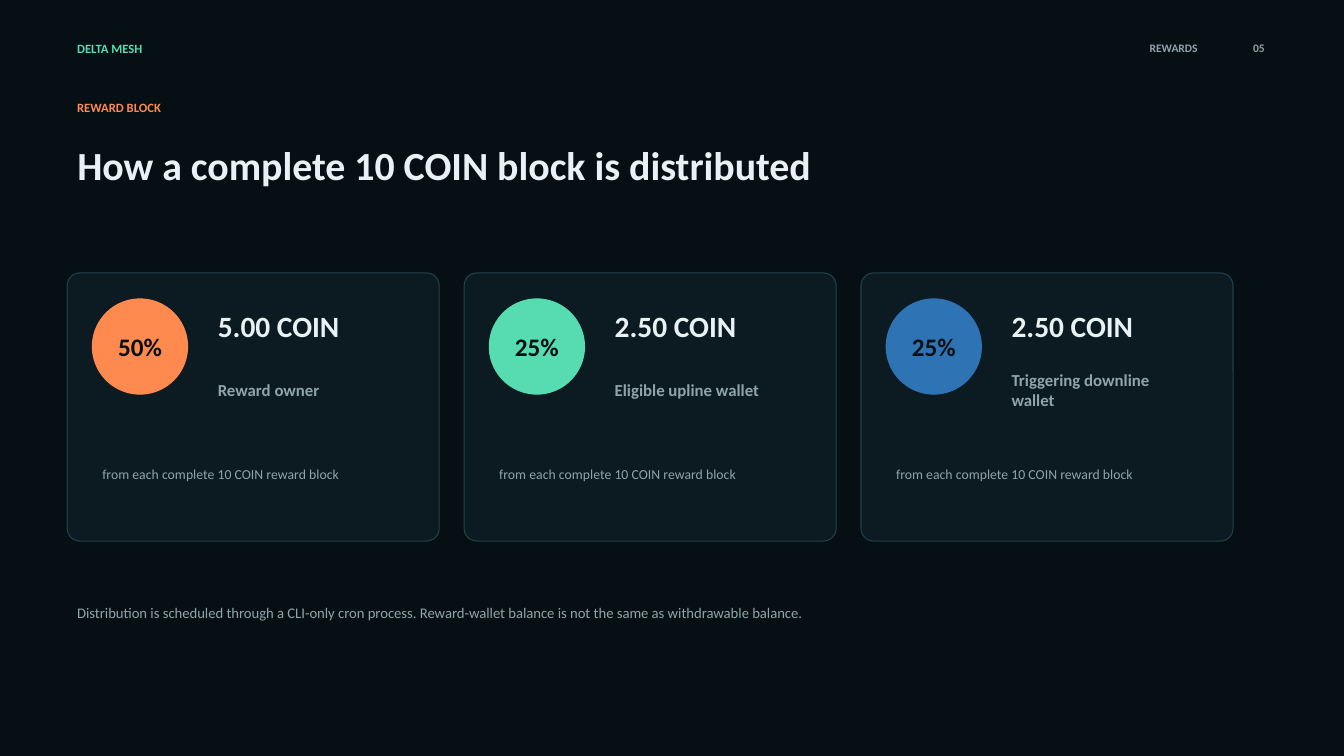
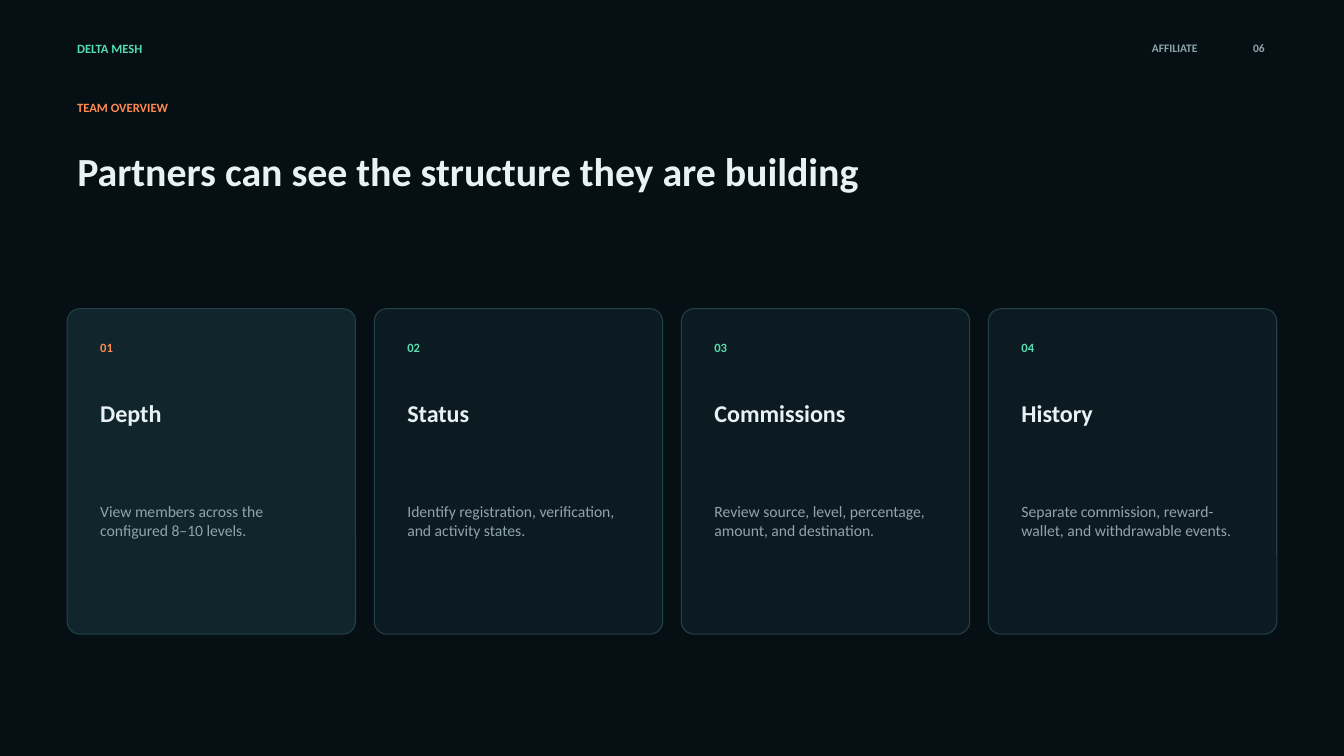
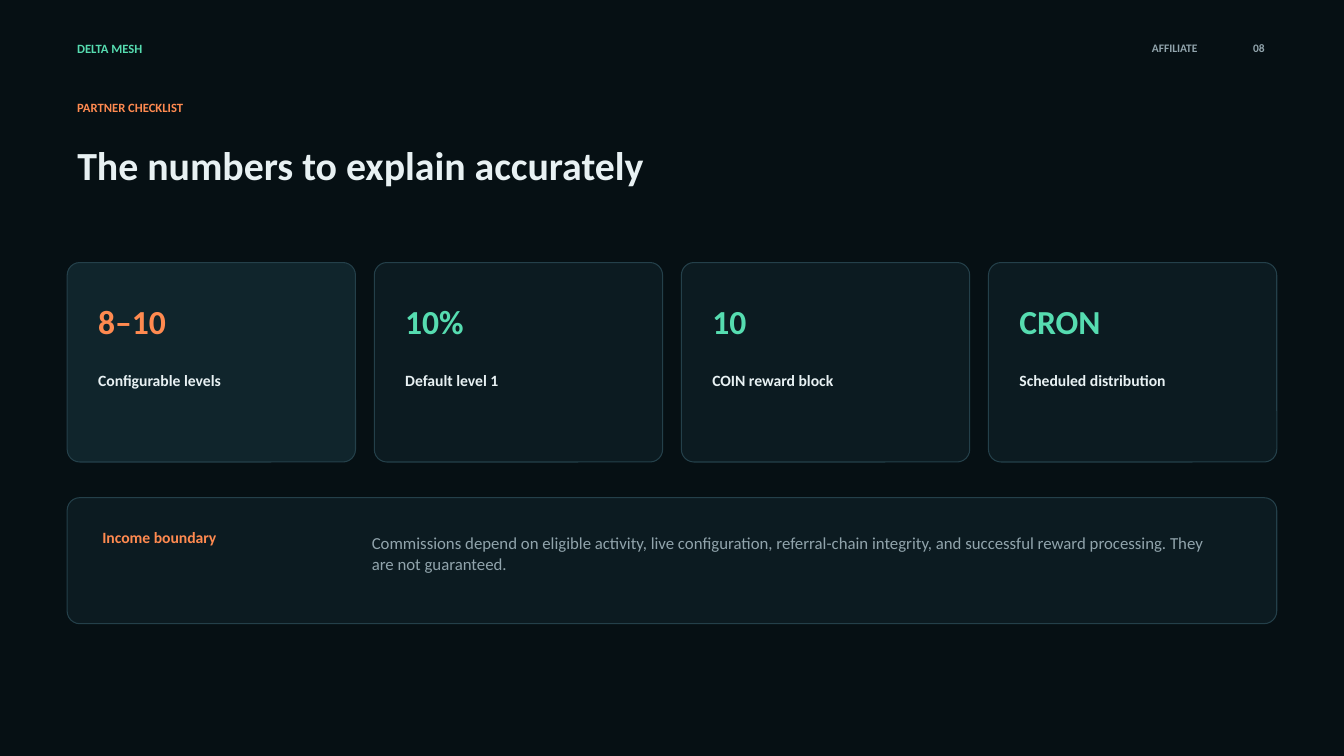
"""Build three dark reward and affiliate slides with a shared header and card grid."""
from dataclasses import dataclass
from typing import NamedTuple

import pptx
import pptx.dml.color
import pptx.enum.shapes
import pptx.enum.text
import pptx.shapes.autoshape
import pptx.slide
import pptx.text.text
import pptx.util

Pt = pptx.util.Pt
RGBColor = pptx.dml.color.RGBColor
PP_ALIGN = pptx.enum.text.PP_ALIGN

NIGHT = RGBColor(0x06, 0x10, 0x14)
PANEL = RGBColor(0x0C, 0x1B, 0x21)
PANEL_LIT = RGBColor(0x10, 0x25, 0x2C)
EDGE = RGBColor(0x24, 0x40, 0x4A)
WHITE = RGBColor(0xE8, 0xF1, 0xF3)
GREY = RGBColor(0x91, 0xA4, 0xAC)
MINT = RGBColor(0x56, 0xDC, 0xB0)
ORANGE = RGBColor(0xFF, 0x8A, 0x50)
BLUE = RGBColor(0x2E, 0x74, 0xB5)

FONT = "Calibri"
LEFT = 48
CONTENT_WIDTH = 864
CARD_RADIUS = 9
BADGE = 68


class Box(NamedTuple):
    left: float
    top: float
    width: float
    height: float

    def inner(self, dx: float, dy: float, width: float, height: float) -> "Box":
        return Box(self.left + dx, self.top + dy, width, height)

    def lengths(self) -> list[pptx.util.Length]:
        return [Pt(v) for v in self]


@dataclass(frozen=True)
class Style:
    size: float
    color: RGBColor
    bold: bool = True
    align: PP_ALIGN = PP_ALIGN.LEFT


@dataclass(frozen=True)
class Heading:
    section: str
    page: str
    kicker: str
    title: str
    title_height: float = 52.5


@dataclass(frozen=True)
class Share:
    percent: str
    amount: str
    receiver: str
    color: RGBColor


@dataclass(frozen=True)
class Topic:
    number: str
    name: str
    detail: str


@dataclass(frozen=True)
class Figure:
    value: str
    label: str


SHARES = [
    Share("50%", "5.00 COIN", "Reward owner", ORANGE),
    Share("25%", "2.50 COIN", "Eligible upline wallet", MINT),
    Share("25%", "2.50 COIN", "Triggering downline wallet", BLUE),
]
TOPICS = [
    Topic("01", "Depth", "View members across the configured 8–10 levels."),
    Topic("02", "Status", "Identify registration, verification, and activity states."),
    Topic("03", "Commissions", "Review source, level, percentage, amount, and destination."),
    Topic("04", "History", "Separate commission, reward-wallet, and withdrawable events."),
]
FIGURES = [
    Figure("8–10", "Configurable levels"),
    Figure("10%", "Default level 1"),
    Figure("10", "COIN reward block"),
    Figure("CRON", "Scheduled distribution"),
]


def write(tf: pptx.text.text.TextFrame, text: str, style: Style) -> None:
    tf.word_wrap = True
    tf.auto_size = pptx.enum.text.MSO_AUTO_SIZE.NONE
    tf.vertical_anchor = pptx.enum.text.MSO_ANCHOR.MIDDLE
    p = tf.paragraphs[0]
    p.text = text
    p.alignment = style.align
    p.font.name = FONT
    p.font.size = Pt(style.size)
    p.font.bold = style.bold
    p.font.color.rgb = style.color


def add_text(s: pptx.slide.Slide, box: Box, text: str, style: Style) -> None:
    write(s.shapes.add_textbox(*box.lengths()).text_frame, text, style)


def add_panel(s: pptx.slide.Slide, box: Box, fill: RGBColor = PANEL, edge: RGBColor = EDGE,
              radius: float = CARD_RADIUS) -> pptx.shapes.autoshape.Shape:
    sp = s.shapes.add_shape(pptx.enum.shapes.MSO_SHAPE.ROUNDED_RECTANGLE, *box.lengths())
    sp.adjustments[0] = radius / min(box.width, box.height)
    sp.shadow.inherit = False
    sp.fill.solid()
    sp.fill.fore_color.rgb = fill
    sp.line.color.rgb = edge
    sp.line.width = Pt(0.75)
    return sp


def add_badge(s: pptx.slide.Slide, box: Box, text: str, color: RGBColor) -> None:
    tf = add_panel(s, box, color, color, box.width / 2).text_frame
    tf.margin_left = tf.margin_right = Pt(0)
    write(tf, text, Style(18, NIGHT, align=PP_ALIGN.CENTER))


def card_row(count: int, top: float, height: float, gap: float,
             total: float = CONTENT_WIDTH) -> list[Box]:
    width = (total - gap * (count - 1)) / count
    return [Box(LEFT + i * (width + gap), top, width, height) for i in range(count)]


def accent(index: int) -> RGBColor:
    return MINT if index else ORANGE


def card_fill(index: int) -> RGBColor:
    return PANEL if index else PANEL_LIT


def add_slide(prs: pptx.presentation.Presentation, heading: Heading) -> pptx.slide.Slide:
    s = prs.slides.add_slide(prs.slide_layouts.get_by_name("Title Only"))
    corner = Style(8.2, GREY, align=PP_ALIGN.RIGHT)
    add_text(s, Box(LEFT, 25.5, 173, 18), "DELTA MESH", Style(9, MINT))
    add_text(s, Box(660, 25.5, 202.5, 18), heading.section, corner)
    add_text(s, Box(870, 25.5, 40.5, 18), heading.page, corner)
    add_text(s, Box(LEFT, 67.5, 265, 18), heading.kicker, Style(9, ORANGE))
    title = s.shapes.title
    title.left, title.top, title.width, title.height = Box(
        LEFT, 91.5, 825, heading.title_height).lengths()
    write(title.text_frame, heading.title, Style(28.5, WHITE))
    return s


def build_rewards(prs: pptx.presentation.Presentation) -> None:
    s = add_slide(prs, Heading("REWARDS", "05", "REWARD BLOCK",
                               "How a complete 10 COIN block is distributed"))
    for share, card in zip(SHARES, card_row(3, 195, 191.5, 17.75, 832.75)):
        add_panel(s, card)
        add_badge(s, card.inner(18, 18.5, BADGE, BADGE), share.percent, share.color)
        add_text(s, card.inner(100.5, 21, 141, 33), share.amount, Style(21, WHITE))
        add_text(s, card.inner(100.5, 63, 141, 40.5), share.receiver, Style(12, GREY))
        add_text(s, card.inner(18, 125.5, 225, 36),
                 "from each complete 10 COIN reward block", Style(9.8, GREY, bold=False))
    add_text(s, Box(LEFT, 418.5, 840, 37.5),
             "Distribution is scheduled through a CLI-only cron process. "
             "Reward-wallet balance is not the same as withdrawable balance.",
             Style(10.5, GREY, bold=False))


def build_team(prs: pptx.presentation.Presentation) -> None:
    s = add_slide(prs, Heading("AFFILIATE", "06", "TEAM OVERVIEW",
                               "Partners can see the structure they are building", 60))
    for i, (topic, card) in enumerate(zip(TOPICS, card_row(4, 220.5, 232.5, 13.4))):
        add_panel(s, card, card_fill(i))
        add_text(s, card.inner(16.5, 17.25, 45, 21), topic.number, Style(9, accent(i)))
        add_text(s, card.inner(16.5, 51, 173, 47), topic.name, Style(17.2, WHITE))
        add_text(s, card.inner(16.5, 108, 173, 87), topic.detail,
                 Style(11.2, GREY, bold=False))


def build_checklist(prs: pptx.presentation.Presentation) -> None:
    s = add_slide(prs, Heading("AFFILIATE", "08", "PARTNER CHECKLIST",
                               "The numbers to explain accurately"))
    for i, (figure, card) in enumerate(zip(FIGURES, card_row(4, 187.5, 142.5, 13.4))):
        add_panel(s, card, card_fill(i))
        add_text(s, card.inner(15, 20.5, 176, 43), figure.value, Style(24, accent(i)))
        add_text(s, card.inner(15, 69.5, 176, 29), figure.label, Style(11.2, WHITE))
    boundary = Box(LEFT, 355.5, CONTENT_WIDTH, 90)
    add_panel(s, boundary)
    add_text(s, boundary.inner(18, 15.5, 187, 25), "Income boundary", Style(11.2, ORANGE))
    add_text(s, boundary.inner(210.5, 13.5, 626.5, 52.5),
             "Commissions depend on eligible activity, live configuration, referral-chain "
             "integrity, and successful reward processing. They are not guaranteed.",
             Style(12, GREY, bold=False))


def main() -> None:
    prs = pptx.Presentation()
    prs.slide_width, prs.slide_height = Pt(960), Pt(540)
    fill = prs.slide_master.background.fill
    fill.solid()
    fill.fore_color.rgb = NIGHT
    build_rewards(prs)
    build_team(prs)
    build_checklist(prs)
    prs.save("out.pptx")


if __name__ == "__main__":
    main()
